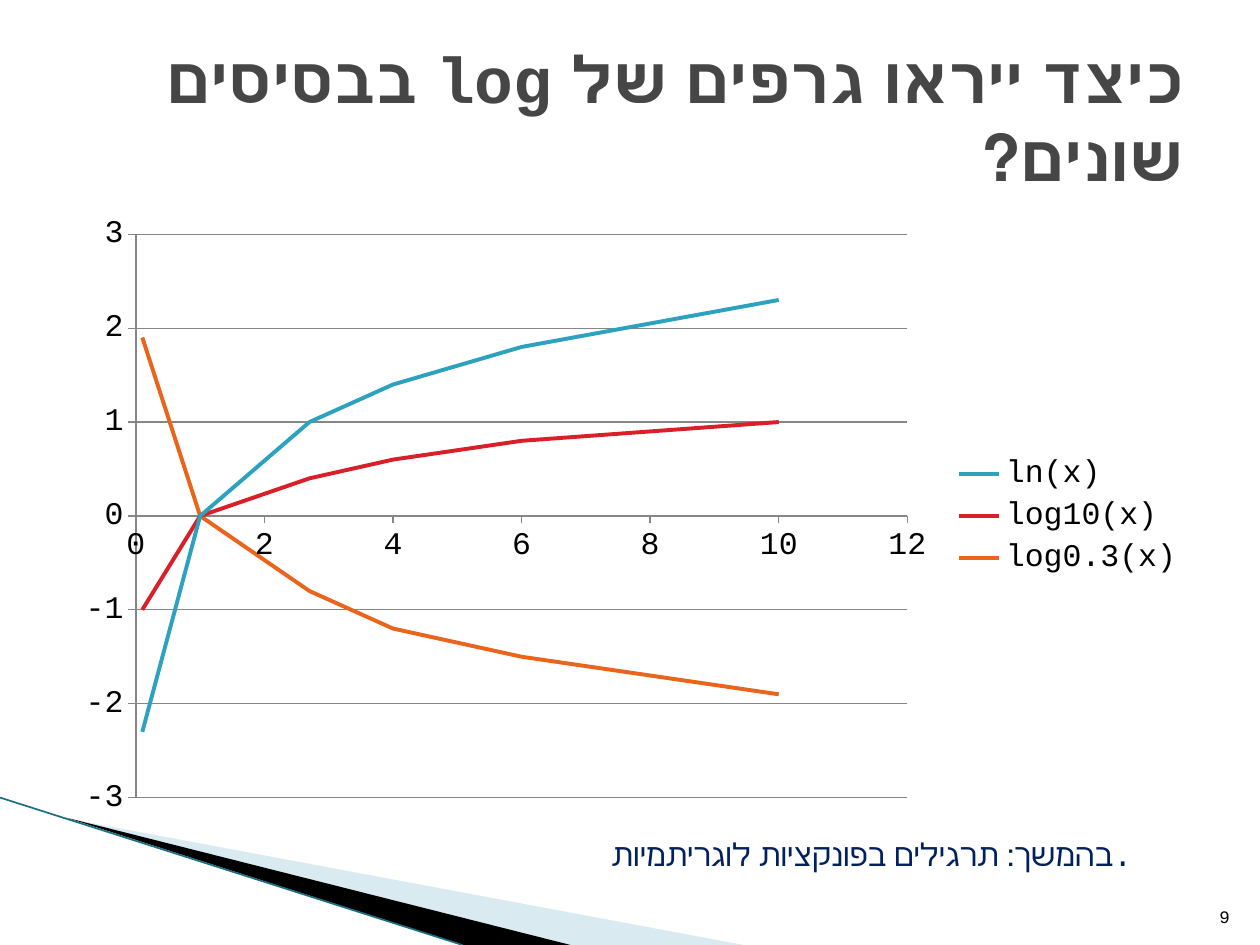
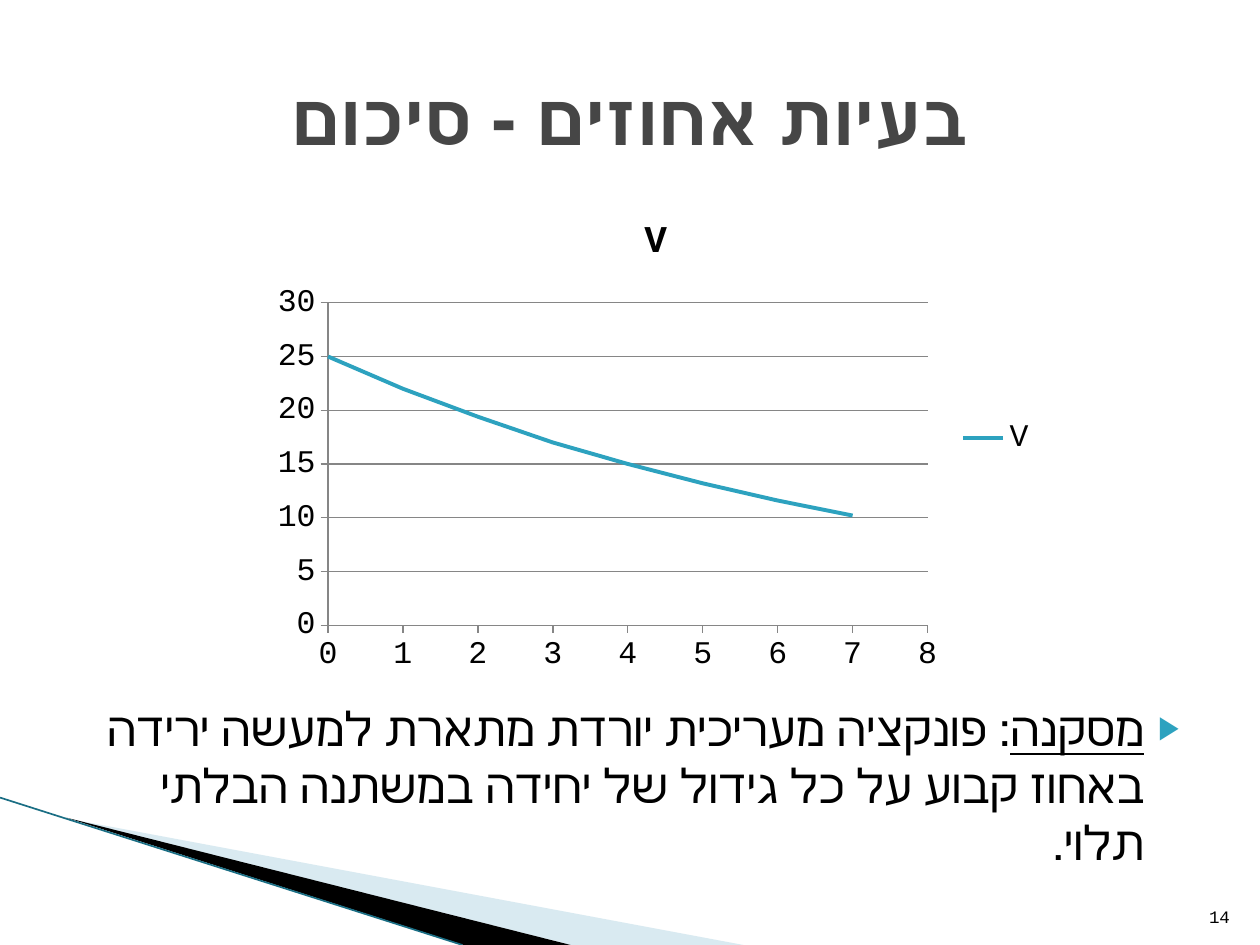
from lxml import etree
from pptx import Presentation
from pptx.chart.data import XyChartData
from pptx.dml.color import RGBColor
from pptx.enum.chart import XL_CHART_TYPE, XL_LEGEND_POSITION, XL_TICK_MARK
from pptx.enum.shapes import MSO_CONNECTOR
from pptx.enum.text import MSO_ANCHOR, MSO_AUTO_SIZE, PP_ALIGN
from pptx.oxml.ns import qn
from pptx.util import Inches, Pt

FONT = "Courier New"
BLACK = RGBColor(0x00, 0x00, 0x00)
TITLE_GREY = RGBColor(0x46, 0x46, 0x46)
NAVY = RGBColor(0x00, 0x20, 0x60)
PALE_BLUE = RGBColor(0xA0, 0xCB, 0xDC)
EDGE_TEAL = RGBColor(0x1A, 0x6E, 0x84)
GRID_GREY = RGBColor(0x86, 0x86, 0x86)
TEAL = RGBColor(0x2D, 0xA2, 0xBF)
RED = RGBColor(0xDA, 0x1F, 0x28)
ORANGE = RGBColor(0xEB, 0x64, 0x1B)

TITLE_BOX = (0.5, 0.3, 9, 1.25)
NUMBER_BOX = (9.46, 7.01, 0.4, 0.4)

# Corner decoration: outline, fill, opacity in percent
WEDGES = [
    ([(0.55, 6.5), (5.9, 7.5), (4.53, 7.5)], PALE_BLUE, 40),
    ([(0.53, 6.49), (4.53, 7.5), (3.68, 7.5)], BLACK, 100),
]
EDGE = (0, 6.33, 3.67, 7.5)

LOG_X = [0.1, 1, 2.7, 4, 6, 10]
LOG_CHART = {
    "box": (0.5, 1.62, 9, 4.95),
    "x": LOG_X,
    "x_range": (0, 12, 2),
    "y_range": (-3, 3, 1),
    "series": [
        ("ln(x)", [-2.3, 0, 1, 1.4, 1.8, 2.3], TEAL),
        ("log10(x)", [-1, 0, 0.4, 0.6, 0.8, 1], RED),
        ("log0.3(x)", [1.9, 0, -0.8, -1.2, -1.5, -1.9], ORANGE),
    ],
}
DECAY_CHART = {
    "box": (2.08, 1.53, 6.25, 3.89),
    "title": "V",
    "x": list(range(8)),
    "x_range": (0, 8, 1),
    "y_range": (0, 30, 5),
    "series": [("V", [25, 22, 19.4, 17, 15, 13.2, 11.6, 10.2], TEAL)],
}

LOG_TITLE = "כיצד ייראו גרפים של log בבסיסים שונים?"
NEXT_TOPIC = "בהמשך: תרגילים בפונקציות לוגריתמיות."
NEXT_TOPIC_BOX = (4.42, 6.58, 5, 0.4)
PERCENT_TITLE = "בעיות אחוזים - סיכום"
CONCLUSION = [
    ("מסקנה", True),
    (": פונקציה מעריכית יורדת מתארת למעשה ירידה באחוז קבוע "
     "על כל גידול של יחידה במשתנה הבלתי תלוי.", False),
]
CONCLUSION_BOX = (0.58, 5.5, 9, 1.49)


def inches(values):
    return [Inches(value) for value in values]


def place(shape, box):
    shape.left, shape.top, shape.width, shape.height = inches(box)


def style_font(font, size, color=BLACK, bold=False):
    font.name = FONT
    font.size = Pt(size)
    font.bold = bold
    font.color.rgb = color


def add_run(paragraph, text, size, color=BLACK, bold=False):
    run = paragraph.add_run()
    run.text = text
    style_font(run.font, size, color, bold)
    return run


def set_rtl(paragraph):
    paragraph._p.get_or_add_pPr().set("rtl", "1")


def add_decoration(slide):
    for points, color, opacity in WEDGES:
        start, *rest = [tuple(inches(point)) for point in points]
        builder = slide.shapes.build_freeform(*start)
        builder.add_line_segments(rest, close=True)
        wedge = builder.convert_to_shape()
        wedge.shadow.inherit = False
        wedge.fill.solid()
        wedge.fill.fore_color.rgb = color
        wedge.line.fill.background()
        if opacity < 100:
            rgb = wedge._element.spPr.find(".//" + qn("a:srgbClr"))
            etree.SubElement(rgb, qn("a:alpha"), val=str(opacity * 1000))
    edge = slide.shapes.add_connector(MSO_CONNECTOR.STRAIGHT, *inches(EDGE))
    edge.line.color.rgb = EDGE_TEAL
    edge.line.width = Pt(0.95)
    etree.SubElement(edge._element.spPr, qn("a:effectLst"))


def add_text(slide, box, text, size, color, align, anchor):
    text_box = slide.shapes.add_textbox(*inches(box))
    frame = text_box.text_frame
    frame.word_wrap = True
    frame.vertical_anchor = anchor
    frame.paragraphs[0].alignment = align
    add_run(frame.paragraphs[0], text, size, color)


def start_slide(prs, layout_index, title, title_size, align, number):
    """Add a slide with its decoration behind the title, and its number."""
    slide = prs.slides.add_slide(prs.slide_layouts[layout_index])
    add_decoration(slide)
    for placeholder in list(slide.placeholders):
        slide.shapes._spTree.append(placeholder._element)
    place(slide.shapes.title, TITLE_BOX)
    frame = slide.shapes.title.text_frame
    frame.auto_size = MSO_AUTO_SIZE.NONE
    frame.vertical_anchor = MSO_ANCHOR.MIDDLE
    heading = frame.paragraphs[0]
    heading.alignment = align
    set_rtl(heading)
    add_run(heading, title, title_size, TITLE_GREY, bold=True)
    add_text(slide, NUMBER_BOX, str(number), 10, BLACK,
             PP_ALIGN.RIGHT, MSO_ANCHOR.BOTTOM)
    return slide


def style_axis(axis, limits, gridlines):
    axis.minimum_scale, axis.maximum_scale, axis.major_unit = limits
    axis.major_tick_mark = XL_TICK_MARK.OUTSIDE
    axis.minor_tick_mark = XL_TICK_MARK.NONE
    axis.has_major_gridlines = gridlines
    lines = [axis.format.line]
    if gridlines:
        lines.append(axis.major_gridlines.format.line)
    for line in lines:
        line.color.rgb = GRID_GREY
        line.width = Pt(0.75)
    axis.tick_labels.number_format = "General"
    axis.tick_labels.number_format_is_linked = False


def add_curves(slide, content):
    data = XyChartData()
    for name, values, _ in content["series"]:
        curve = data.add_series(name)
        for x, y in zip(content["x"], values):
            curve.add_data_point(x, y)
    chart = slide.shapes.add_chart(XL_CHART_TYPE.XY_SCATTER_SMOOTH_NO_MARKERS,
                                   *inches(content["box"]), data).chart
    style_font(chart.font, 18)
    chart.has_title = "title" in content
    if chart.has_title:
        heading = chart.chart_title.text_frame.paragraphs[0]
        add_run(heading, content["title"], 21.6, bold=True)
        chart.chart_title.include_in_layout = False
    chart.has_legend = True
    chart.legend.position = XL_LEGEND_POSITION.RIGHT
    chart.legend.include_in_layout = False
    style_axis(chart.category_axis, content["x_range"], False)
    style_axis(chart.value_axis, content["y_range"], True)
    chart.plots[0].vary_by_categories = False
    for curve, (_, _, color) in zip(chart.plots[0].series, content["series"]):
        curve.smooth = True
        curve.format.line.color.rgb = color
        curve.format.line.width = Pt(2.25)


def add_bullet(paragraph):
    properties = paragraph._p.get_or_add_pPr()
    properties.set("marL", str(Inches(0.4)))
    properties.set("indent", str(Inches(-0.28)))
    bullet_color = etree.SubElement(properties, qn("a:buClr"))
    etree.SubElement(bullet_color, qn("a:srgbClr"), val=str(TEAL))
    etree.SubElement(properties, qn("a:buSzPct"), val="68000")
    etree.SubElement(properties, qn("a:buChar"), char="▶")


def fill_conclusion(body):
    place(body, CONCLUSION_BOX)
    body.text_frame.auto_size = MSO_AUTO_SIZE.NONE
    paragraph = body.text_frame.paragraphs[0]
    add_bullet(paragraph)
    set_rtl(paragraph)
    paragraph.alignment = PP_ALIGN.RIGHT
    paragraph.space_before = Pt(0)
    for text, underlined in CONCLUSION:
        add_run(paragraph, text, 27).font.underline = underlined


def main():
    prs = Presentation()
    prs.slide_width, prs.slide_height = Inches(10), Inches(7.5)

    logs = start_slide(prs, 5, LOG_TITLE, 36.9, PP_ALIGN.RIGHT, 9)
    add_curves(logs, LOG_CHART)
    add_text(logs, NEXT_TOPIC_BOX, NEXT_TOPIC, 18, NAVY,
             PP_ALIGN.CENTER, MSO_ANCHOR.TOP)

    percents = start_slide(prs, 1, PERCENT_TITLE, 41, PP_ALIGN.CENTER, 14)
    fill_conclusion(percents.placeholders[1])
    add_curves(percents, DECAY_CHART)

    prs.save("out.pptx")


if __name__ == "__main__":
    main()
